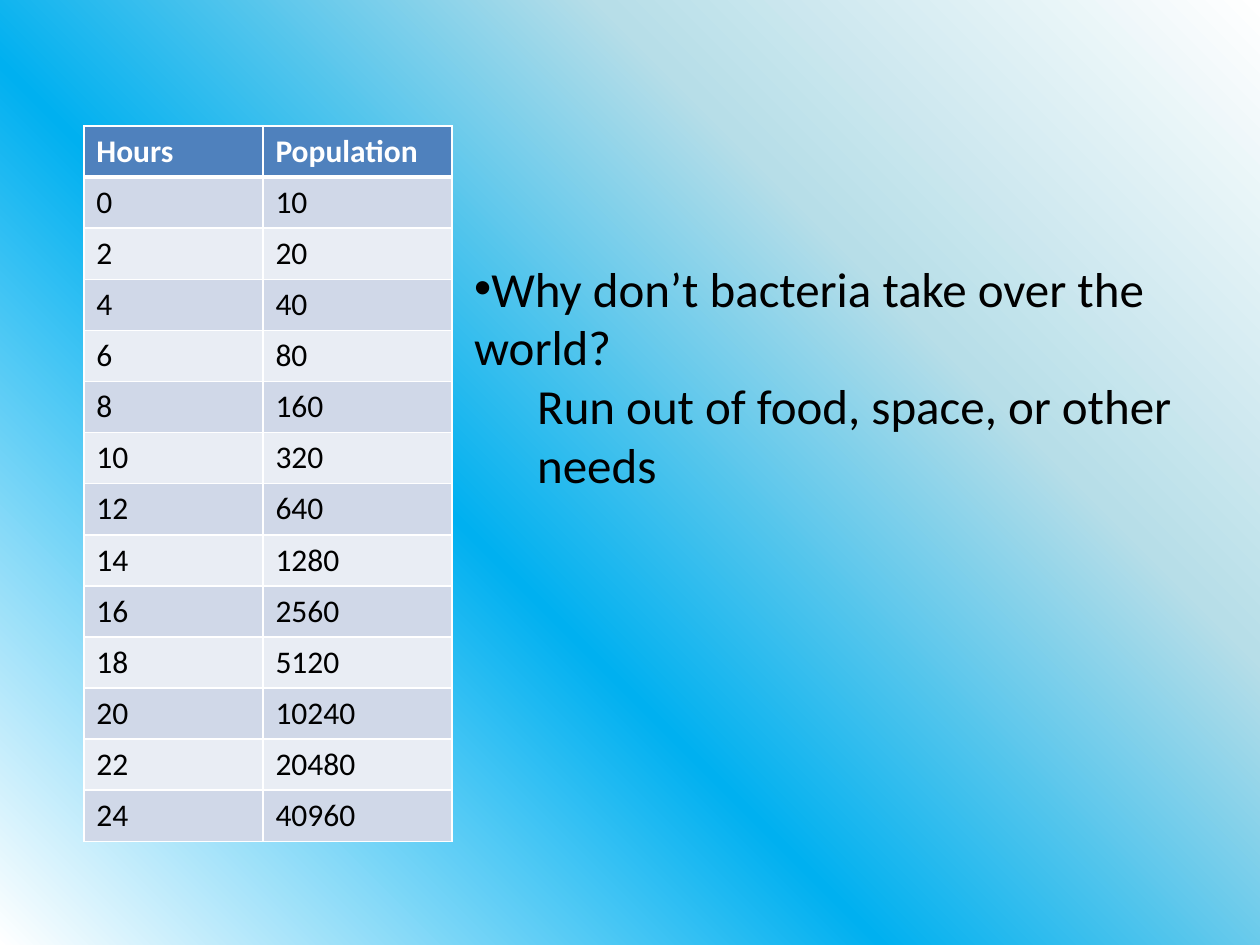
from pptx import Presentation
from pptx.dml.color import RGBColor
from pptx.enum.text import MSO_AUTO_SIZE
from pptx.oxml import parse_xml
from pptx.oxml.ns import nsdecls
from pptx.util import Cm, Pt

GROW = MSO_AUTO_SIZE.SHAPE_TO_FIT_TEXT
FONT = "Calibri"
COLORS = {
    "white": "FFFFFF",
    "black": "000000",
    "head": "4F81BD",
    "odd": "D0D8E8",
    "even": "E9EDF4",
    "sky": "00B0F0",
    "pale": "B7DEE8",
}
# Position, colour and opacity, all in percent
STOPS = [(0, "white", 100), (40, "sky", 75), (70, "pale", 90), (100, "white", 100)]


def rgb(name):
    return RGBColor.from_string(COLORS[name])


def style(par, size, color, bold=False):
    for run in par.runs:
        font = run.font
        font.name, font.size, font.bold = FONT, Pt(size), bold
        font.color.rgb = rgb(color)


def add_back(slide):
    """Diagonal gradient, rising from bottom left to top right."""
    stops = "".join(
        f'<a:gs pos="{pos * 1000}"><a:srgbClr val="{COLORS[name]}">'
        f'<a:alpha val="{alpha * 1000}"/></a:srgbClr></a:gs>'
        for pos, name, alpha in STOPS
    )
    back = parse_xml(
        f'<p:bg {nsdecls("p", "a")}><p:bgPr><a:gradFill rotWithShape="1">'
        f'<a:gsLst>{stops}</a:gsLst><a:lin ang="{315 * 60000}" scaled="0"/>'
        "</a:gradFill><a:effectLst/></p:bgPr></p:bg>"
    )
    slide.element.cSld.insert(0, back)


def add_edge(cell, side, width):
    cell._tc.get_or_add_tcPr().append(parse_xml(
        f'<a:{side} {nsdecls("a")} w="{Pt(width)}"><a:solidFill>'
        f'<a:srgbClr val="{COLORS["white"]}"/></a:solidFill></a:{side}>'
    ))


def add_growth(slide, left, top, width, height):
    """Table of a population that doubles every two hours."""
    rows = [("Hours", "Population")]
    rows += [(2 * step, 10 * 2 ** step) for step in range(13)]
    table = slide.shapes.add_table(len(rows), 2, left, top, width, height).table
    table.columns[0].width = Cm(3.61)
    table.columns[1].width = width - Cm(3.61)
    for i, row in enumerate(rows):
        table.rows[i].height = height // len(rows)
        fill = "head" if i == 0 else "odd" if i % 2 else "even"
        for j, value in enumerate(row):
            cell = table.cell(i, j)
            cell.text = str(value)
            style(cell.text_frame.paragraphs[0], 18,
                  "black" if i else "white", bold=i == 0)
            # Thick rule between header and body
            edges = {"lnL": 1, "lnR": 1, "lnT": 3 if i == 1 else 1,
                     "lnB": 3 if i == 0 else 1}
            for side, size in edges.items():
                add_edge(cell, side, size)
            cell.fill.solid()
            cell.fill.fore_color.rgb = rgb(fill)


def add_query(slide, left, top, width, height):
    """Bulleted question with its indented answer."""
    frame = slide.shapes.add_textbox(left, top, width, height).text_frame
    frame.word_wrap = True
    frame.auto_size = GROW
    ask = frame.paragraphs[0]
    ask.text = "Why don’t bacteria take over the world?"
    props = ask._p.get_or_add_pPr()
    props.append(parse_xml(f'<a:buFont {nsdecls("a")} typeface="Arial"/>'))
    props.append(parse_xml(f'<a:buChar {nsdecls("a")} char="•"/>'))
    reply = frame.add_paragraph()
    reply.text = "Run out of food, space, or other needs"
    reply.level = 1
    reply._p.get_or_add_pPr().set("marL", str(Cm(1.27)))
    for par in frame.paragraphs:
        style(par, 28, "black")


def main():
    deck = Presentation()
    deck.slide_width, deck.slide_height = Cm(25.4), Cm(19.05)
    slide = deck.slides.add_slide(deck.slide_layouts[6])
    add_back(slide)
    add_growth(slide, Cm(1.69), Cm(2.54), Cm(7.42), Cm(14.43))
    add_query(slide, Cm(9.31), Cm(5.08), Cm(15.03), Cm(5.05))
    deck.save("out.pptx")


if __name__ == "__main__":
    main()
